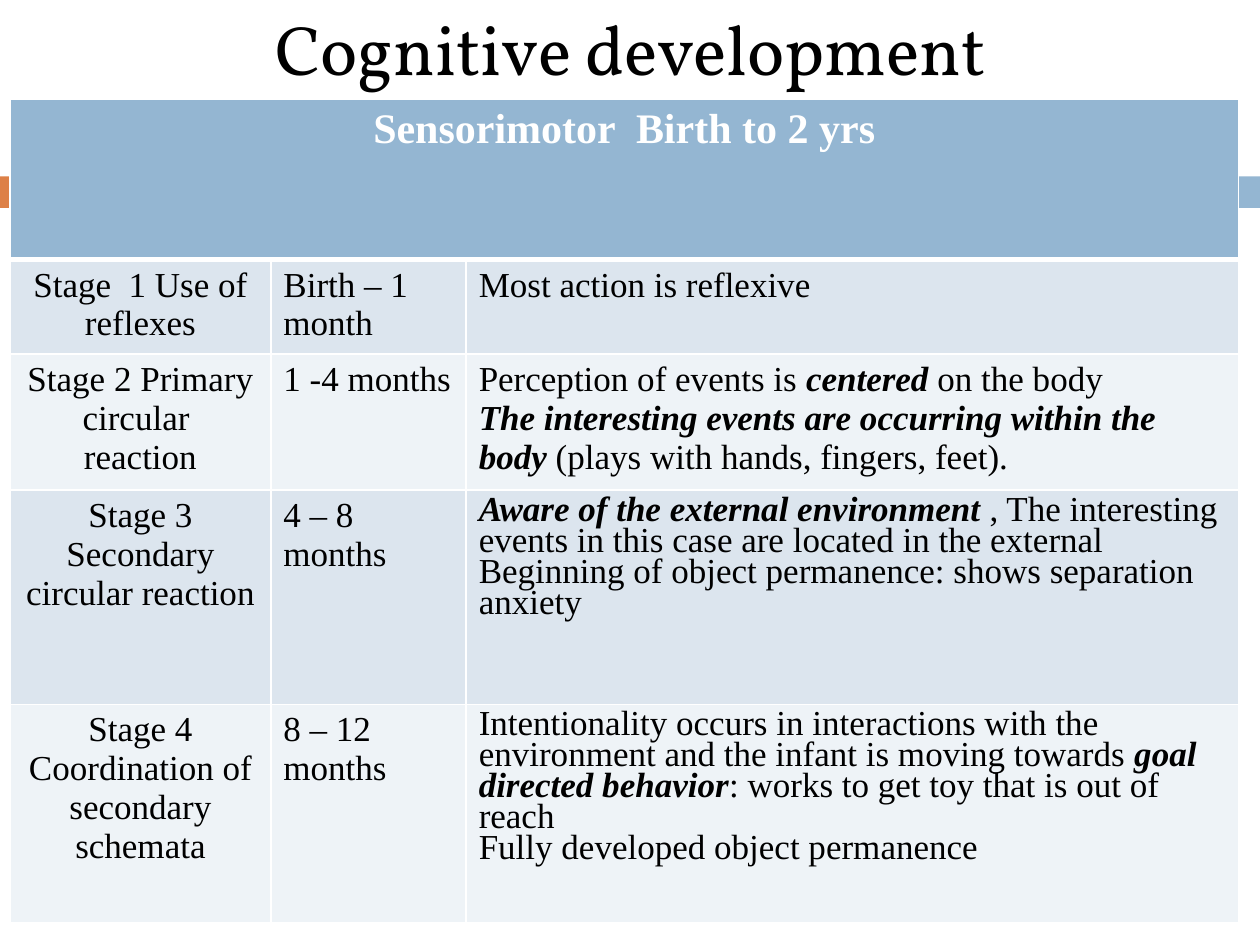
import lxml.etree
import pptx
import pptx.dml.color
import pptx.enum.shapes
import pptx.enum.text
import pptx.oxml.ns
import pptx.util

Inches = pptx.util.Inches
Pt = pptx.util.Pt
ALIGN = pptx.enum.text.PP_ALIGN

COLORS = {
    "orange": "DD8047",
    "blue": "94B6D2",
    "dark_band": "DCE5EE",
    "light_band": "EEF3F7",
    "white": "FFFFFF",
    "black": "000000",
}
BODY_FONT = "Times New Roman"
COLUMN_WIDTHS = [2.07, 1.55, 6.13]
ROW_HEIGHTS = [1.27, 0.75, 1.08, 1.7, 1.73]
HEADING = "Sensorimotor  Birth to 2 yrs"
STAGES = [
    ("Stage  1 Use of reflexes", "Birth – 1 month", 1.0,
     [[("Most action is reflexive", False)]]),
    ("Stage 2 Primary circular  reaction", "1 -4 months", 1.0,
     [[("Perception of events is ", False), ("centered", True), (" on the body", False)],
      [("The interesting events are occurring within the body ", True),
       ("(plays with hands, fingers, feet).", False)]]),
    ("Stage 3 Secondary circular reaction", "4 – 8 months", 0.8,
     [[("Aware of the external environment ", True),
       (", The interesting events in this case are located in the external", False)],
      [("Beginning of object permanence: shows separation anxiety", False)]]),
    ("Stage 4 Coordination of secondary schemata", "8 – 12 months", 0.8,
     [[("Intentionality occurs in interactions with the environment "
        "and the infant is moving towards ", False),
       ("goal directed behavior", True),
       (": works to get toy that is out of reach", False)],
      [("Fully developed object permanence", False)]]),
]


def rgb(name):
    """Return the named colour."""
    return pptx.dml.color.RGBColor.from_string(COLORS[name])


def add_run(paragraph, text, size, color, font=BODY_FONT, bold=False, italic=False):
    """Append one formatted run to a paragraph."""
    run = paragraph.add_run()
    run.text = text
    run.font.name = font
    run.font.size = Pt(size)
    run.font.bold = bold
    run.font.italic = italic
    run.font.color.rgb = rgb(color)


def add_bar(slide, left, top, width, height, color):
    """Draw one flat accent bar."""
    bar = slide.shapes.add_shape(
        pptx.enum.shapes.MSO_SHAPE.RECTANGLE,
        Inches(left), Inches(top), Inches(width), Inches(height))
    bar.shadow.inherit = False
    bar.fill.solid()
    bar.fill.fore_color.rgb = rgb(color)
    bar.line.fill.background()


def add_title(slide, left, top, width, height):
    """Place the slide title."""
    title = slide.shapes.add_textbox(
        Inches(left), Inches(top), Inches(width), Inches(height))
    frame = title.text_frame
    frame.word_wrap = True
    frame.margin_top = frame.margin_bottom = 0
    frame.vertical_anchor = pptx.enum.text.MSO_ANCHOR.TOP
    frame.paragraphs[0].alignment = ALIGN.CENTER
    add_run(frame.paragraphs[0], "Cognitive development", 40, "black", "Vollkorn")


def style_cell(cell, color, top_width=1, bottom_width=1):
    """Give a cell white borders and a solid fill."""
    properties = cell._tc.get_or_add_tcPr()
    qn = pptx.oxml.ns.qn
    for side, width in (("L", 1), ("R", 1), ("T", top_width), ("B", bottom_width)):
        border = lxml.etree.SubElement(properties, qn(f"a:ln{side}"), w=str(Pt(width)))
        fill = lxml.etree.SubElement(border, qn("a:solidFill"))
        lxml.etree.SubElement(fill, qn("a:srgbClr"), val=COLORS["white"])
    cell.fill.solid()
    cell.fill.fore_color.rgb = rgb(color)


def fill_cell(cell, paragraphs, alignment=ALIGN.LEFT, spacing=1.0):
    """Write paragraphs of (text, emphasized) runs into a body cell."""
    cell.margin_bottom = Inches(0.02)
    frame = cell.text_frame
    for index, runs in enumerate(paragraphs):
        paragraph = frame.add_paragraph() if index else frame.paragraphs[0]
        paragraph.alignment = alignment
        paragraph.line_spacing = spacing
        for text, emphasized in runs:
            add_run(paragraph, text, 20, "black", bold=emphasized, italic=emphasized)


def add_stage_table(slide, left, top):
    """Build the table of sensorimotor stages."""
    stages = slide.shapes.add_table(
        len(ROW_HEIGHTS), len(COLUMN_WIDTHS), Inches(left), Inches(top),
        Inches(sum(COLUMN_WIDTHS)), Inches(sum(ROW_HEIGHTS))).table
    for column, width in zip(stages.columns, COLUMN_WIDTHS):
        column.width = Inches(width)
    for row, height in zip(stages.rows, ROW_HEIGHTS):
        row.height = Inches(height)

    for cell in stages.rows[0].cells:
        style_cell(cell, "blue", bottom_width=3)
    heading = stages.cell(0, 0)
    heading.merge(stages.cell(0, 2))
    heading_line = heading.text_frame.paragraphs[0]
    heading_line.alignment = ALIGN.CENTER
    add_run(heading_line, HEADING, 24, "white", bold=True)

    for number, (stage, age, spacing, description) in enumerate(STAGES, 1):
        for cell in stages.rows[number].cells:
            style_cell(cell, "dark_band" if number % 2 else "light_band",
                       top_width=3 if number == 1 else 1)
        fill_cell(stages.cell(number, 0), [[(stage, False)]], ALIGN.CENTER)
        fill_cell(stages.cell(number, 1), [[(age, False)]])
        fill_cell(stages.cell(number, 2), description, spacing=spacing)


def main():
    """Build and save the slide."""
    deck = pptx.Presentation()
    deck.slide_width = Inches(10)
    deck.slide_height = Inches(7.5)
    slide = deck.slides.add_slide(deck.slide_layouts[6])
    add_bar(slide, 0, 1.4, 0.58, 0.25, "orange")
    add_bar(slide, 0.65, 1.4, 9.35, 0.25, "blue")
    add_title(slide, 0.7, 0.04, 8.61, 0.75)
    add_stage_table(slide, 0.08, 0.79)
    deck.save("out.pptx")


if __name__ == "__main__":
    main()
